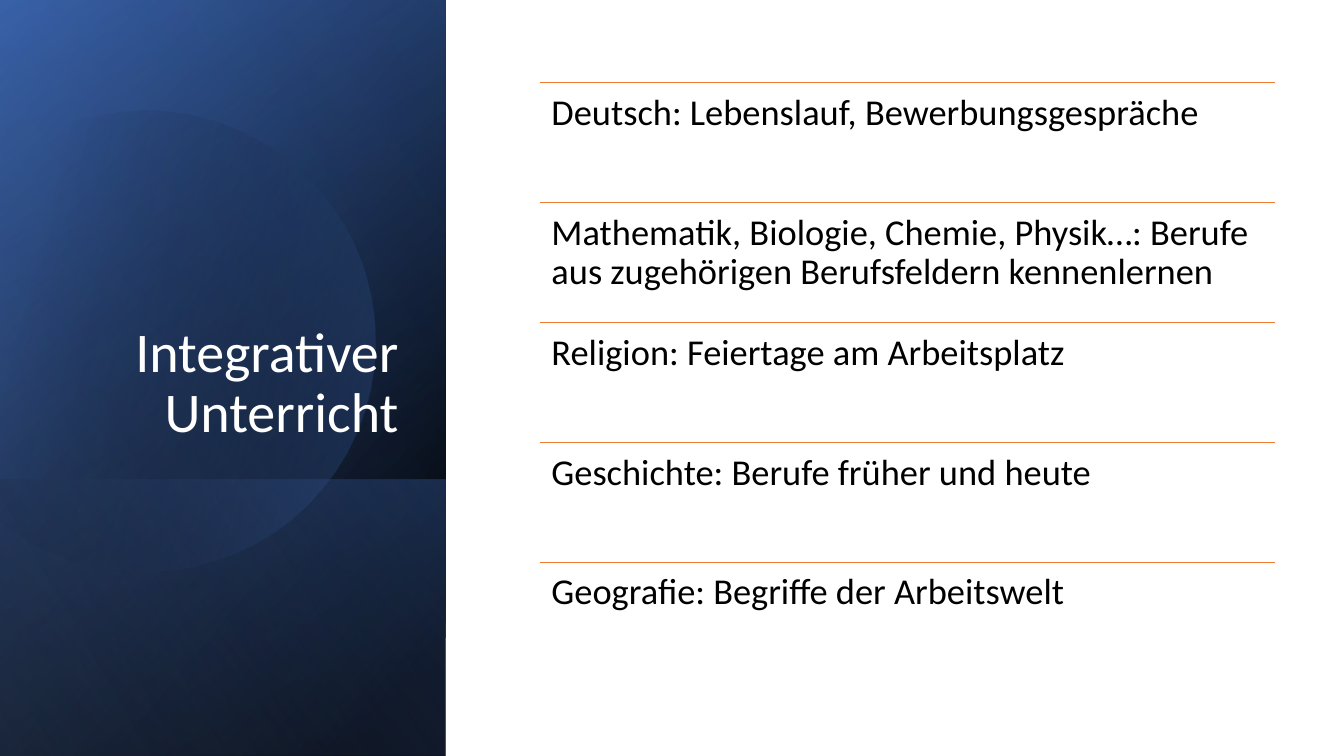
"""Build the slide "Integrativer Unterricht" with a gradient side panel and a ruled list."""
import math
from dataclasses import dataclass

from lxml import etree
from pptx import Presentation
from pptx import util as u
from pptx.dml.color import RGBColor
from pptx.enum import shapes, text
from pptx.oxml import ns


@dataclass(frozen=True)
class Theme:
    """Colours, font and type sizes of the slide."""
    font: str = "Calibri"
    title_size: int = 40
    subject_size: int = 26
    black: str = "000000"
    white: str = "FFFFFF"
    rule: str = "ED7D31"
    deep_blue: str = "2F5597"
    blue: str = "4472C4"
    light_blue: str = "8FAADC"


@dataclass(frozen=True)
class Box:
    """Position and size in inches."""
    left: float
    top: float
    width: float
    height: float

    def lengths(self) -> tuple:
        """Return the four values as slide lengths."""
        return tuple(u.Inches(v) for v in (self.left, self.top, self.width, self.height))


@dataclass(frozen=True)
class Stop:
    """Gradient stop with position and opacity in percent."""
    position: int
    color: str
    opacity: int = 100


@dataclass(frozen=True)
class Gradient:
    """Two-stop linear gradient with a clockwise angle."""
    start: Stop
    end: Stop
    angle: int


@dataclass(frozen=True)
class Panel:
    """Rotated and mirrored gradient rectangle."""
    box: Box
    gradient: Gradient


THEME = Theme()
SIDE = Box(-1.54, 1.54, 7.5, 4.42)
BACK_PANELS = (
    Panel(SIDE, Gradient(Stop(8, THEME.black), Stop(100, THEME.deep_blue), 50)),
    Panel(SIDE, Gradient(Stop(0, THEME.black, 0), Stop(99, THEME.blue, 46), 30)),
    Panel(Box(0.84, 3.92, 2.74, 4.42),
          Gradient(Stop(2, THEME.blue, 29), Stop(100, THEME.black, 30), 130)),
)
FRONT_PANEL = Panel(SIDE, Gradient(Stop(0, THEME.black, 0), Stop(99, THEME.light_blue, 11), 120))

DISC_GRADIENT = Gradient(Stop(29, THEME.black, 0), Stop(100, THEME.blue, 43), 30)
DISC_ROTATION = 343.9
DISC_CENTER = (1.58, 3.34)
DISC_START = (1.49, 1.1)
DISC_CURVES = (
    ((2.46, 1.12), (3.35, 1.77), (3.63, 2.75)),
    ((3.98, 3.97), (3.28, 5.23), (2.07, 5.58)),
    ((1.31, 5.8), (0.53, 5.61), (-0.03, 5.14)),
    ((-0.15, 5.03), (-0.15, 1.75), (0, 1.61)),
    ((0.23, 1.42), (0.5, 1.28), (0.8, 1.19)),
    ((1.03, 1.13), (1.26, 1.1), (1.49, 1.1)),
)
STRAIGHT_CURVE = 3
CURVE_STEPS = 16

TITLE_BOX = Box(0.64, 1.84, 3.41, 2.62)
FIRST_ROW = Box(5.36, 0.82, 7.29, 1.19)
SUBJECTS = (
    "Deutsch: Lebenslauf, Bewerbungsgespräche",
    "Mathematik, Biologie, Chemie, Physik…: Berufe aus zugehörigen Berufsfeldern kennenlernen",
    "Religion: Feiertage am Arbeitsplatz",
    "Geschichte: Berufe früher und heute",
    "Geografie: Begriffe der Arbeitswelt",
)


def apply_gradient(shape, gradient: Gradient) -> None:
    """Fill a shape with the gradient and remove outline and shadow."""
    shape.shadow.inherit = False
    shape.line.fill.background()
    shape.fill.gradient()
    shape.fill.gradient_angle = 360 - gradient.angle
    for target, stop in zip(shape.fill.gradient_stops, (gradient.start, gradient.end)):
        target.position = stop.position / 100
        target.color.rgb = RGBColor.from_string(stop.color)
    colors = shape.element.spPr.iter(ns.qn("a:srgbClr"))
    for color, stop in zip(colors, (gradient.start, gradient.end)):
        if stop.opacity < 100:
            etree.SubElement(color, ns.qn("a:alpha"), val=str(stop.opacity * 1000))


def add_panel(slide, panel: Panel) -> None:
    """Draw one panel of the side area."""
    shape = slide.shapes.add_shape(shapes.MSO_SHAPE.RECTANGLE, *panel.box.lengths())
    shape.rotation = 90
    shape.element.spPr.find(ns.qn("a:xfrm")).set("flipH", "1")
    apply_gradient(shape, panel.gradient)


def curve_point(points: tuple, t: float) -> tuple:
    """Return the point of a cubic curve at t."""
    weights = [math.comb(3, i) * t ** i * (1 - t) ** (3 - i) for i in range(4)]
    return tuple(sum(w * p[axis] for w, p in zip(weights, points)) for axis in (0, 1))


def unrotate(point: tuple) -> tuple:
    """Turn a point back to its place before the disc is rotated."""
    angle = math.radians(-DISC_ROTATION)
    dx, dy = (value - middle for value, middle in zip(point, DISC_CENTER))
    return (u.Inches(DISC_CENTER[0] + dx * math.cos(angle) - dy * math.sin(angle)),
            u.Inches(DISC_CENTER[1] + dx * math.sin(angle) + dy * math.cos(angle)))


def add_disc(slide) -> None:
    """Draw the clipped translucent disc."""
    outline = [DISC_START]
    for index, curve in enumerate(DISC_CURVES):
        if index == STRAIGHT_CURVE:
            outline.extend(curve)
        else:
            points = (outline[-1], *curve)
            outline.extend(curve_point(points, step / CURVE_STEPS)
                           for step in range(1, CURVE_STEPS + 1))
    vertices = [unrotate(point) for point in outline]
    builder = slide.shapes.build_freeform(*vertices[0])
    builder.add_line_segments(vertices[1:], close=True)
    shape = builder.convert_to_shape()
    shape.rotation = DISC_ROTATION
    apply_gradient(shape, DISC_GRADIENT)


def add_text(slide, box: Box, words: str, size: int, color: str):
    """Add a wrapped one-paragraph text box and return its frame."""
    frame = slide.shapes.add_textbox(*box.lengths()).text_frame
    frame.word_wrap = True
    paragraph = frame.paragraphs[0]
    paragraph.text = words
    paragraph.line_spacing = 0.9
    paragraph.font.name = THEME.font
    paragraph.font.size = u.Pt(size)
    paragraph.font.color.rgb = RGBColor.from_string(color)
    return frame


def add_subject(slide, box: Box, words: str) -> None:
    """Draw a rule with a subject below it."""
    left, top, width, _ = box.lengths()
    rule = slide.shapes.add_connector(shapes.MSO_CONNECTOR.STRAIGHT, left, top, left + width, top)
    rule.line.color.rgb = RGBColor.from_string(THEME.rule)
    rule.line.width = u.Pt(0.5)
    etree.SubElement(rule.element.spPr, ns.qn("a:effectLst"))
    frame = add_text(slide, box, words, THEME.subject_size, THEME.black)
    frame.margin_left = frame.margin_right = u.Inches(0.11)
    frame.margin_top = frame.margin_bottom = u.Inches(0.11)


def main() -> None:
    """Build and save the presentation."""
    presentation = Presentation()
    presentation.slide_width, presentation.slide_height = u.Inches(13.33), u.Inches(7.5)
    slide = presentation.slides.add_slide(presentation.slide_layouts[6])
    for panel in BACK_PANELS:
        add_panel(slide, panel)
    add_disc(slide)
    add_panel(slide, FRONT_PANEL)
    title = add_text(slide, TITLE_BOX, "Integrativer Unterricht", THEME.title_size, THEME.white)
    title.vertical_anchor = text.MSO_ANCHOR.BOTTOM
    title.paragraphs[0].alignment = text.PP_ALIGN.RIGHT
    for index, words in enumerate(SUBJECTS):
        top = FIRST_ROW.top + index * FIRST_ROW.height
        add_subject(slide, Box(FIRST_ROW.left, top, FIRST_ROW.width, FIRST_ROW.height), words)
    presentation.save("out.pptx")


if __name__ == "__main__":
    main()
